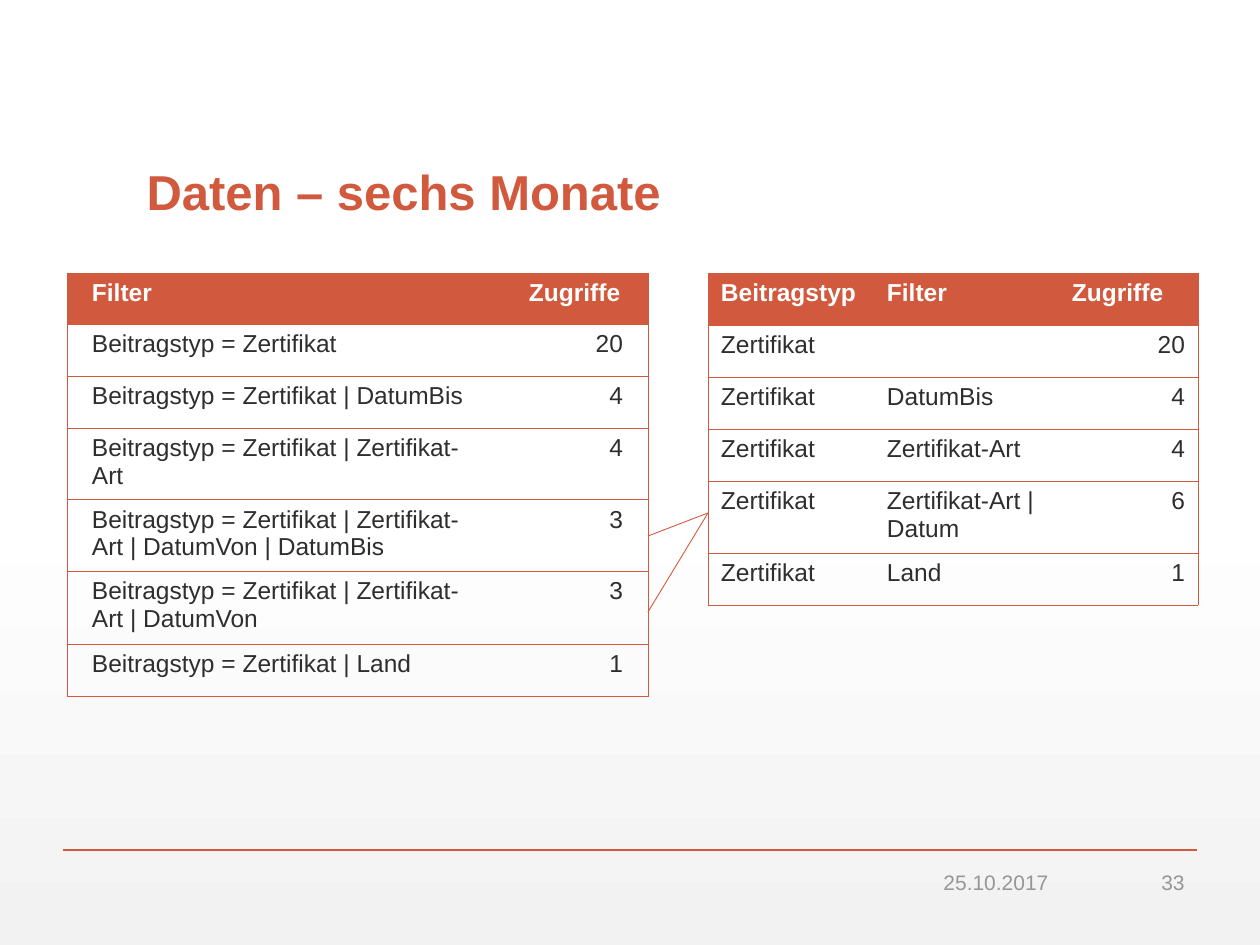
from dataclasses import dataclass

from lxml import etree
from pptx import Presentation
from pptx.dml.color import RGBColor
from pptx.enum.text import MSO_ANCHOR, PP_ALIGN
from pptx.enum.shapes import MSO_CONNECTOR
from pptx.oxml.ns import qn
from pptx.util import Pt

LEFT, RIGHT = PP_ALIGN.LEFT, PP_ALIGN.RIGHT
BOTTOM, MIDDLE = MSO_ANCHOR.BOTTOM, MSO_ANCHOR.MIDDLE
LINE = MSO_CONNECTOR.STRAIGHT
SCALE = 914400 / 126  # EMU in one px


@dataclass(frozen=True)
class Theme:
    font: str = "Arial"
    accent: str = "D15A3E"
    ink: str = "2D2E2D"
    gray: str = "959795"
    white: str = "FFFFFF"
    shade: str = "F2F2F2"
    title: int = 28
    cell: int = 14
    foot: int = 12


THEME = Theme()


def px(n):
    return round(n * SCALE)


def rgb(code):
    return RGBColor.from_string(code)


def put(item, values):
    for name, value in values.items():
        setattr(item, name, value)


def write(frame, text, size, color, bold=False, align=LEFT):
    frame.text = text
    para = frame.paragraphs[0]
    para.alignment = align
    put(para.font, {"name": THEME.font, "size": Pt(size), "bold": bold})
    para.font.color.rgb = rgb(color)
    return para


def draw_line(slide, x1, y1, x2, y2, width):
    line = slide.shapes.add_connector(LINE, px(x1), px(y1), px(x2), px(y2))
    line.line.color.rgb = rgb(THEME.accent)
    line.line.width = Pt(width)
    etree.SubElement(line._element.spPr, qn("a:effectLst"))


def set_edges(cell, edges):
    """Draw the named edges of a cell and clear the others."""
    props = cell._tc.get_or_add_tcPr()
    for spot, side in enumerate("LRTB"):
        edge = etree.Element(qn("a:ln" + side), w=str(Pt(0.5)))
        if side in edges:
            fill = etree.SubElement(edge, qn("a:solidFill"))
            etree.SubElement(fill, qn("a:srgbClr"), val=THEME.accent)
        else:
            etree.SubElement(edge, qn("a:noFill"))
        props.insert(spot, edge)


def add_grid(slide, x, y, cols, rows, data, inset):
    """Table with a filled header, ruled rows and numbers in the last column."""
    box = map(px, (x, y, sum(cols), sum(rows)))
    table = slide.shapes.add_table(len(rows), len(cols), *box).table
    table.horz_banding = False
    for col, width in zip(table.columns, cols):
        col.width = px(width)
    for row, height in zip(table.rows, rows):
        row.height = px(height)
    last = len(cols) - 1
    for r, texts in enumerate(data):
        head = r == 0
        for c, text in enumerate(texts):
            cell = table.cell(r, c)
            put(cell, {"margin_left": px(inset), "margin_right": px(inset)})
            if head:
                cell.fill.solid()
                cell.fill.fore_color.rgb = rgb(THEME.accent)
            else:
                cell.fill.background()
            write(cell.text_frame, text, THEME.cell,
                  THEME.white if head else THEME.ink, head,
                  RIGHT if c == last and not head else LEFT)
            set_edges(cell, "TB" + "L" * (c == 0) + "R" * (c == last))


def add_title(slide, x, y, w, h):
    title = slide.shapes.title
    put(title, {"left": px(x), "top": px(y), "width": px(w), "height": px(h)})
    put(title.text_frame, {"vertical_anchor": BOTTOM, "word_wrap": True})
    para = write(title.text_frame, "Daten – sechs Monate", THEME.title,
                 THEME.accent, True)
    para.line_spacing = 0.9


def add_foot(slide, x, y, w):
    """Rule with the date and page number below it."""
    draw_line(slide, x, y, x + w, y, 1)
    for text, left, width in (("25.10.2017", 819, 179), ("33", 1040, 94)):
        box = slide.shapes.add_textbox(px(x + left), px(y + 17), px(width), px(30))
        put(box.text_frame, {"word_wrap": True, "vertical_anchor": MIDDLE})
        write(box.text_frame, text, THEME.foot, THEME.gray, align=RIGHT)


def add_back(slide):
    fill = slide.background.fill
    fill.gradient()
    fill.gradient_angle = 270
    tones = ((0.53, THEME.white), (1, THEME.shade))
    for stop, (spot, color) in zip(fill.gradient_stops, tones):
        stop.position = spot
        stop.color.rgb = rgb(color)


def main():
    deck = Presentation()
    put(deck, {"slide_width": px(1260), "slide_height": px(945)})
    slide = deck.slides.add_slide(deck.slide_layouts[5])
    add_back(slide)
    add_foot(slide, 63, 850, 1134)
    add_title(slide, 134, 69, 993, 158)

    # Raw filters on the left
    kind = "Beitragstyp = Zertifikat"
    art = kind + " | Zertifikat-Art"
    raw = [
        ("Filter", "Zugriffe"),
        (kind, "20"),
        (kind + " | DatumBis", "4"),
        (art, "4"),
        (art + " | DatumVon | DatumBis", "3"),
        (art + " | DatumVon", "3"),
        (kind + " | Land", "1"),
    ]
    add_grid(slide, 67, 273, (437, 144), (51, 52, 52, 68, 72, 73, 52), raw, 25)

    # Grouped filters on the right
    sums = [("", "20"), ("DatumBis", "4"), ("Zertifikat-Art", "4"),
            ("Zertifikat-Art | Datum", "6"), ("Land", "1")]
    data = [("Beitragstyp", "Filter", "Zugriffe")]
    data += [("Zertifikat", *pair) for pair in sums]
    add_grid(slide, 708, 273, (166, 185, 139), (52, 52, 52, 52, 72, 52), data, 13)

    # Links from the two merged rows to their sum
    for y in (612, 536):
        draw_line(slide, 648, y, 708, 513, 0.5)

    deck.save("out.pptx")


if __name__ == "__main__":
    main()
